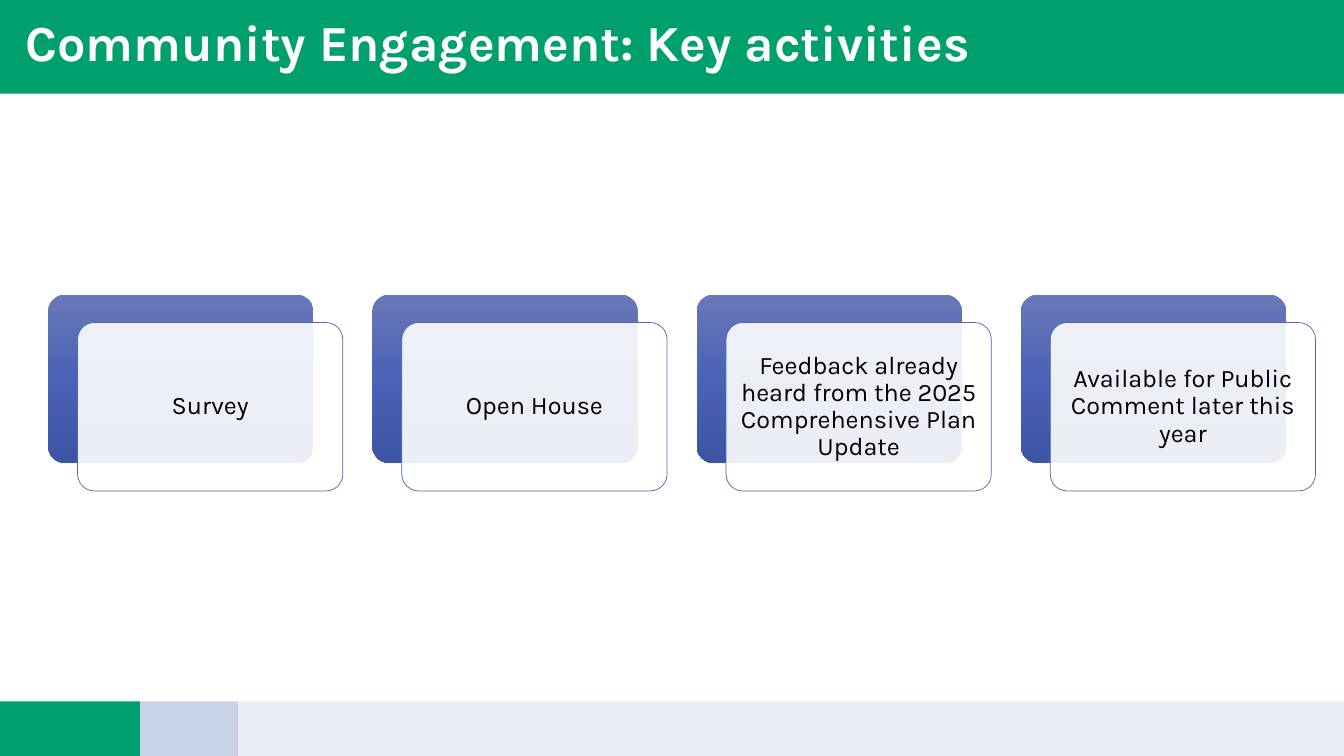
import copy
from dataclasses import dataclass

import lxml.etree
import pptx
import pptx.dml.color
import pptx.enum.shapes
import pptx.enum.text
import pptx.oxml.ns
import pptx.util

Pt = pptx.util.Pt
SHAPES = pptx.enum.shapes.MSO_SHAPE
MIDDLE = pptx.enum.text.MSO_ANCHOR.MIDDLE
ALIGN = pptx.enum.text.PP_ALIGN


@dataclass(frozen=True)
class Theme:
    font: str = "Karla"
    head: int = 36
    body: int = 18
    green: str = "00A06E"
    mist: str = "C8D3E8"
    pale: str = "EAEEF6"
    white: str = "FFFFFF"
    ink: str = "000000"
    edge: str = "4F65B0"
    blues: tuple = ("6878B9", "4A62B5", "3E55A5")


class Painter:
    """Draws styled elements on one slide, with lengths in points."""

    def __init__(self, slide, theme):
        self.slide = slide
        self.theme = theme

    def color(self, code):
        return pptx.dml.color.RGBColor.from_string(code)

    def shape(self, kind, left, top, width, height):
        shape = self.slide.shapes.add_shape(
            kind, Pt(left), Pt(top), Pt(width), Pt(height))
        shape.shadow.inherit = False
        shape.line.fill.background()
        return shape

    def bar(self, left, top, width, height, code):
        bar = self.shape(SHAPES.RECTANGLE, left, top, width, height)
        bar.fill.solid()
        bar.fill.fore_color.rgb = self.color(code)

    def label(self, shape, text, size, code, align, bold=False):
        frame = shape.text_frame
        frame.word_wrap = True
        frame.vertical_anchor = MIDDLE
        frame.text = text
        para = frame.paragraphs[0]
        para.alignment = align
        para.line_spacing = 0.9
        para.font.name = self.theme.font
        para.font.size = Pt(size)
        para.font.bold = bold
        para.font.color.rgb = self.color(code)
        return frame

    def title(self, text, left, top, width, height):
        title = self.slide.shapes.title
        title.left, title.top = Pt(left), Pt(top)
        title.width, title.height = Pt(width), Pt(height)
        self.label(title, text, self.theme.head, self.theme.white,
                   ALIGN.LEFT, True)
        self.slide.shapes.element.append(title.element)

    def panel(self, left, top, width, height):
        panel = self.shape(SHAPES.ROUNDED_RECTANGLE, left, top, width, height)
        panel.adjustments[0] = 0.1
        return panel

    def shade(self, shape, codes):
        shape.fill.gradient()
        shape.fill.gradient_angle = 270
        stops = shape.element.find(".//" + pptx.oxml.ns.qn("a:gsLst"))
        stops.append(copy.deepcopy(stops[0]))
        last = len(codes) - 1
        for i, (stop, code) in enumerate(zip(shape.fill.gradient_stops, codes)):
            stop.position = i / last
            stop.color.rgb = self.color(code)

    def card(self, text, left, top, width, height, right, down):
        theme = self.theme
        self.shade(self.panel(left, top, width, height), theme.blues)
        front = self.panel(left + right, top + down, width, height)
        front.fill.solid()
        front.fill.fore_color.rgb = self.color(theme.white)
        tint = front.element.spPr.find(".//" + pptx.oxml.ns.qn("a:srgbClr"))
        lxml.etree.SubElement(
            tint, pptx.oxml.ns.qn("a:alpha")).set("val", "90000")
        front.line.color.rgb = self.color(theme.edge)
        front.line.width = Pt(0.5)
        frame = self.label(front, text, theme.body, theme.ink, ALIGN.CENTER)
        frame.margin_left = frame.margin_right = Pt(5.4)
        frame.margin_top = frame.margin_bottom = Pt(5.4)


def main():
    deck = pptx.Presentation()
    deck.slide_width, deck.slide_height = Pt(960), Pt(540)
    theme = Theme()
    slide = deck.slides.add_slide(deck.slide_layouts.get_by_name("Title Only"))
    paint = Painter(slide, theme)

    foot = 501
    for left, right, code in ((170, 960, theme.pale), (0, 100, theme.green),
                              (100, 170, theme.mist)):
        paint.bar(left, foot, right - left, 540 - foot, code)
    paint.bar(0, 0, 960, 67, theme.green)
    paint.title("Community Engagement: Key activities", 11, 13, 949, 39)

    steps = (
        "Survey",
        "Open House",
        "Feedback already heard from the 2025 Comprehensive Plan Update",
        "Available for Public Comment later this year",
    )
    for i, text in enumerate(steps):
        paint.card(text, 34.4 + i * 231.6, 210.4, 189.5, 120.3, 21, 20)

    deck.save("out.pptx")


if __name__ == "__main__":
    main()
